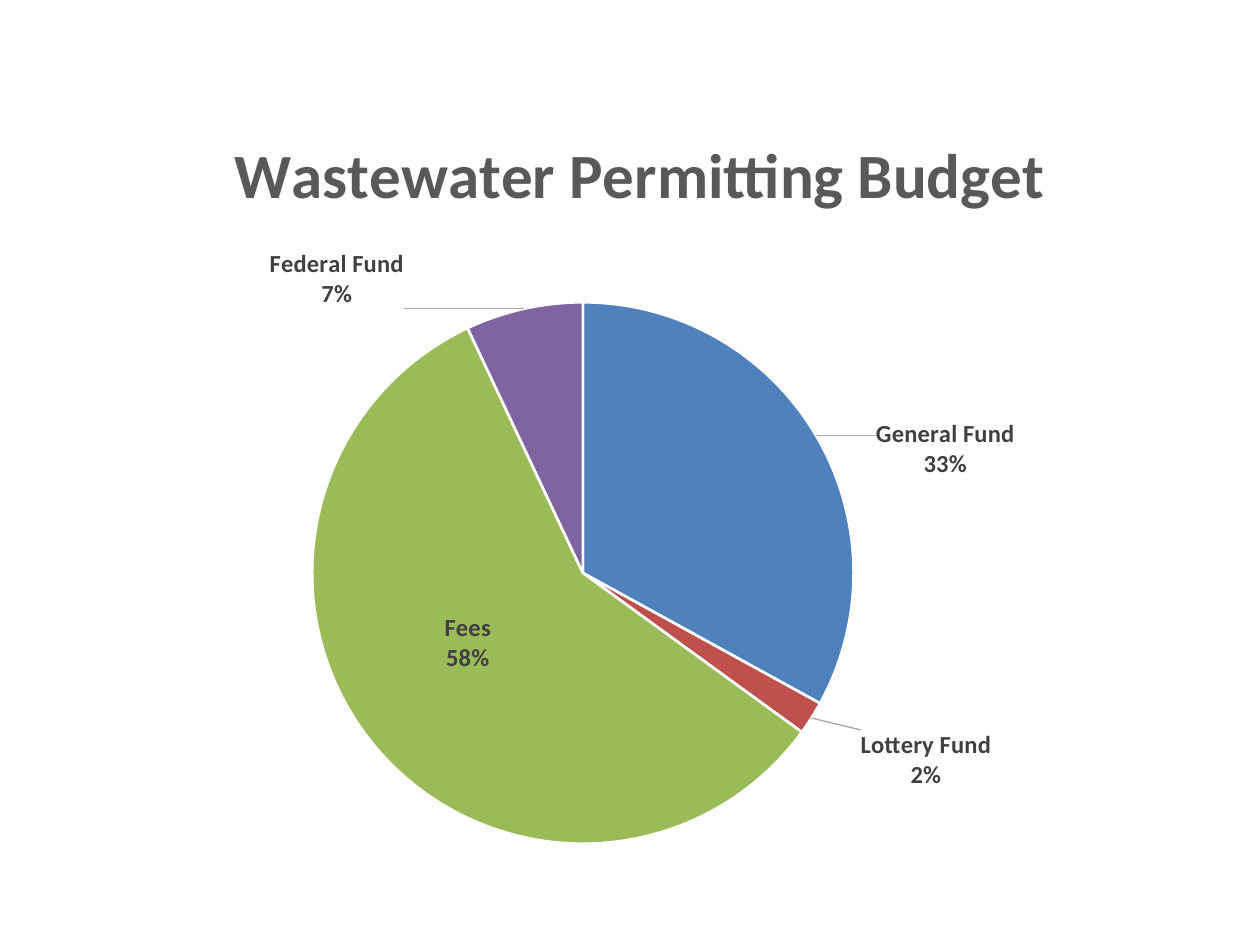
import pptx
import pptx.chart.data
import pptx.dml.color
import pptx.enum.chart
import pptx.oxml
import pptx.oxml.ns
import pptx.util

Inches = pptx.util.Inches
RGBColor = pptx.dml.color.RGBColor
LabelPosition = pptx.enum.chart.XL_LABEL_POSITION
WHITE = RGBColor(0xFF, 0xFF, 0xFF)
TITLE_GRAY = RGBColor(0x59, 0x59, 0x59)
LABEL_GRAY = RGBColor(0x40, 0x40, 0x40)
BLUE = RGBColor(0x4F, 0x81, 0xBD)
RED = RGBColor(0xC0, 0x50, 0x4D)
GREEN = RGBColor(0x9B, 0xBB, 0x59)
PURPLE = RGBColor(0x80, 0x64, 0xA2)
NAMESPACES = pptx.oxml.ns.nsdecls("c", "a")


def format_font(font, size, color):
    font.name = "Calibri"
    font.size = pptx.util.Pt(size)
    font.bold = True
    font.color.rgb = color


def make_layout(**settings):
    items = "".join(f'<c:{name} val="{value}"/>' for name, value in settings.items())
    return pptx.oxml.parse_xml(
        f"<c:layout {NAMESPACES}><c:manualLayout>{items}</c:manualLayout></c:layout>")


deck = pptx.Presentation()
deck.slide_width = Inches(10)
deck.slide_height = Inches(7.5)
slide = deck.slides.add_slide(deck.slide_layouts[6])

funds = [
    ("General Fund", 33, BLUE, LabelPosition.OUTSIDE_END, 0.05, 0.06),
    ("Lottery Fund", 2, RED, LabelPosition.OUTSIDE_END, 0.04, 0.01),
    ("Fees", 58, GREEN, LabelPosition.CENTER, -0.01, -0.02),
    ("Federal Fund", 7, PURPLE, LabelPosition.OUTSIDE_END, -0.11, 0.01),
]
budget = pptx.chart.data.CategoryChartData()
budget.categories = [fund[0] for fund in funds]
budget.add_series("Series 1", [fund[1] for fund in funds])
chart = slide.shapes.add_chart(
    pptx.enum.chart.XL_CHART_TYPE.PIE,
    Inches(0.75), Inches(0.63), Inches(8.52), Inches(6.32), budget).chart
chart.font.name = "Calibri"
chart.font.size = pptx.util.Pt(10)
chart.has_legend = False

chart.has_title = True
title = chart.chart_title
title.text_frame.text = "Wastewater Permitting Budget"
format_font(title.text_frame.paragraphs[0].runs[0].font, 36, TITLE_GRAY)
title.include_in_layout = False
title_element = title._element
for old_layout in title_element.findall(pptx.oxml.ns.qn("c:layout")):
    title_element.remove(old_layout)
title_element.insert(1, make_layout(xMode="edge", yMode="edge", x=0.12, y=0.05))

plot = chart.plots[0]
plot.vary_by_categories = True
plot_area = plot._element.getparent()
for old_layout in plot_area.findall(pptx.oxml.ns.qn("c:layout")):
    plot_area.remove(old_layout)
plot_area.insert(0, make_layout(
    layoutTarget="inner", xMode="edge", yMode="edge", x=0.2, y=0.28, w=0.51, h=0.68))

series = plot.series[0]
labels = series.data_labels
labels.show_category_name = True
labels.show_percentage = True
labels.show_value = False
format_font(labels.font, 14, LABEL_GRAY)
labels._element.append(pptx.oxml.parse_xml(
    f'<c:leaderLines {NAMESPACES}><c:spPr><a:ln w="9525"><a:solidFill>'
    '<a:srgbClr val="A6A6A6"/></a:solidFill></a:ln></c:spPr></c:leaderLines>'))

for index, (name, value, color, position, shift_x, shift_y) in enumerate(funds):
    point = series.points[index]
    point.format.fill.solid()
    point.format.fill.fore_color.rgb = color
    point.format.line.color.rgb = WHITE
    point.format.line.width = pptx.util.Pt(1.5)
    format_font(point.data_label.font, 14, LABEL_GRAY)
    point.data_label.position = position
    label = labels._element.findall(pptx.oxml.ns.qn("c:dLbl"))[index]
    label.insert(1, make_layout(x=shift_x, y=shift_y))
    for part, shown in (("showVal", 0), ("showCatName", 1), ("showPercent", 1)):
        label.find(pptx.oxml.ns.qn(f"c:{part}")).set("val", str(shown))
    label.append(pptx.oxml.parse_xml(f"<c:separator {NAMESPACES}>\n</c:separator>"))

deck.save("out.pptx")
